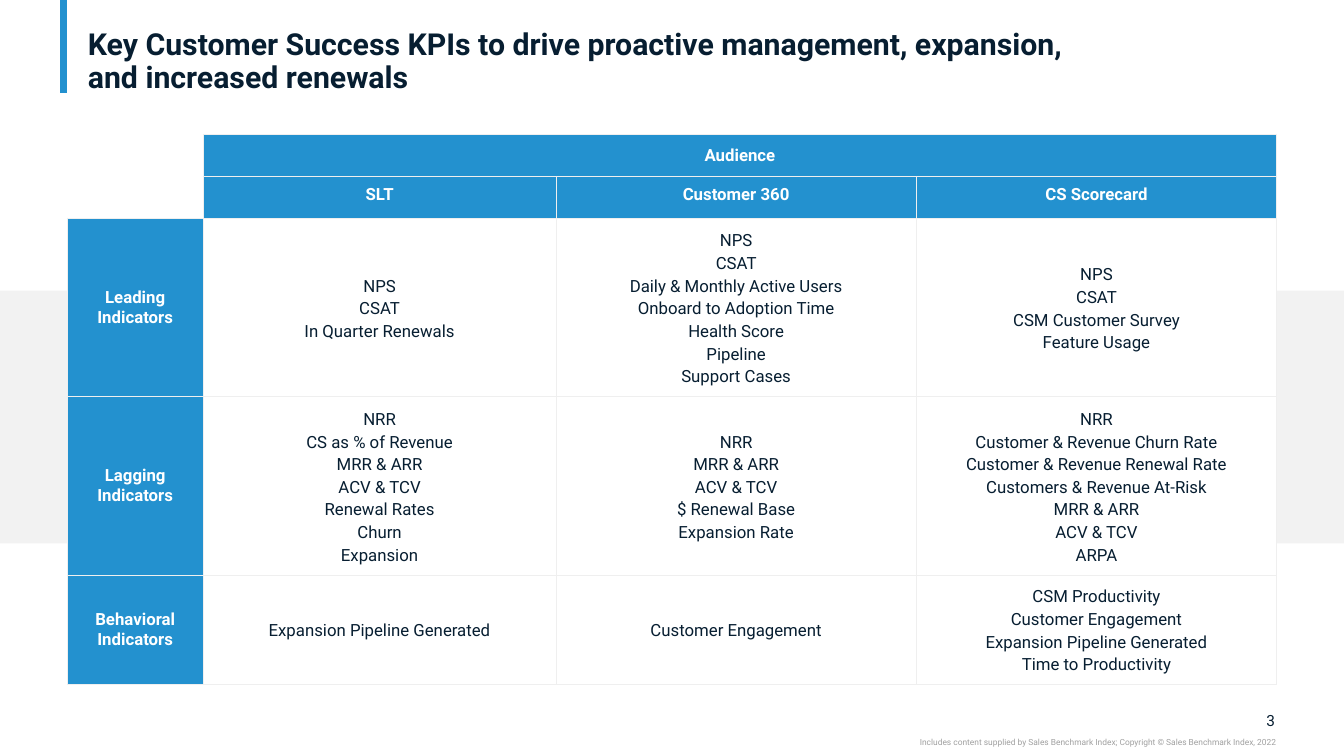
from lxml.etree import SubElement
from pptx import Presentation
from pptx.dml.color import RGBColor as RGB
from pptx.enum.shapes import MSO_CONNECTOR as CONN, MSO_SHAPE as SHAPE
from pptx.enum.text import MSO_ANCHOR as ANCHOR, PP_ALIGN as ALIGN
from pptx.oxml import parse_xml
from pptx.oxml.ns import nsdecls, qn
from pptx.util import Inches, Pt

COLORS = {"blue": "2391CF", "navy": "071E31", "white": "FFFFFF",
          "band": "F2F2F2", "border": "EFEFEF", "note": "A0A0A0"}
COLS, ROWS = 160, 90
COL_WIDTHS = [16.2, 42, 42.9, 42.9]
ROW_HEIGHTS = [5, 5, 20, 20, 12.6]
AUDIENCES = ["SLT", "Customer 360", "CS Scorecard"]
INDICATORS = {
    "Leading Indicators": [
        ["NPS", "CSAT", "In Quarter Renewals"],
        ["NPS", "CSAT", "Daily & Monthly Active Users", "Onboard to Adoption Time",
         "Health Score", "Pipeline", "Support Cases"],
        ["NPS", "CSAT", "CSM Customer Survey", "Feature Usage"],
    ],
    "Lagging Indicators": [
        ["NRR", "CS as % of Revenue", "MRR & ARR", "ACV & TCV", "Renewal Rates",
         "Churn", "Expansion"],
        ["NRR", "MRR & ARR", "ACV & TCV", "$ Renewal Base", "Expansion Rate"],
        ["NRR", "Customer & Revenue Churn Rate", "Customer & Revenue Renewal Rate",
         "Customers & Revenue At-Risk", "MRR & ARR", "ACV & TCV", "ARPA"],
    ],
    "Behavioral Indicators": [
        ["Expansion Pipeline Generated"],
        ["Customer Engagement"],
        ["CSM Productivity", "Customer Engagement", "Expansion Pipeline Generated",
         "Time to Productivity"],
    ],
}


class Deck:
    font = "Roboto"

    def __init__(self):
        self.prs = Presentation()
        self.prs.slide_width, self.prs.slide_height = Inches(13.333), Inches(7.5)
        self.s = self.prs.slides.add_slide(self.prs.slide_layouts[6])

    def x(self, cols):
        return round(self.prs.slide_width * cols / COLS)

    def y(self, rows):
        return round(self.prs.slide_height * rows / ROWS)

    def box(self, left, top, width, height):
        return self.x(left), self.y(top), self.x(width), self.y(height)

    def color(self, name):
        return RGB.from_string(COLORS[name])

    def style(self, p, size, color, bold=False, align=ALIGN.LEFT, spacing=None):
        p.alignment = align
        p.line_spacing = spacing
        p.font.name, p.font.size, p.font.bold = self.font, Pt(size), bold
        p.font.color.rgb = self.color(color)

    def rule(self, x1, y1, x2, y2, color, weight):
        sp = self.s.shapes.add_connector(
            CONN.STRAIGHT, self.x(x1), self.y(y1), self.x(x2), self.y(y2))
        sp.line.color.rgb = self.color(color)
        sp.line.width = Pt(weight)
        SubElement(sp._element.spPr, qn("a:effectLst"))

    def rect(self, area, color):
        sp = self.s.shapes.add_shape(SHAPE.RECTANGLE, *self.box(*area))
        sp.shadow.inherit = False
        sp.fill.solid()
        sp.fill.fore_color.rgb = self.color(color)
        sp.line.fill.background()

    def text(self, area, lines, inset=0, anchor=ANCHOR.TOP, **style):
        tf = self.s.shapes.add_textbox(*self.box(*area)).text_frame
        tf.word_wrap = True
        tf.vertical_anchor = anchor
        tf.margin_left = tf.margin_right = tf.margin_top = tf.margin_bottom = Inches(inset)
        p = tf.paragraphs[0]
        for i, line in enumerate(lines):
            if i:
                p.add_line_break()
            p.add_run().text = line
        self.style(p, **style)

    def table(self, left, top, widths, heights):
        area = self.box(left, top, sum(widths), sum(heights))
        table = self.s.shapes.add_table(len(heights), len(widths), *area).table
        table.first_row = table.horz_banding = False
        for col, width in zip(table.columns, widths):
            col.width = self.x(width)
        for row, height in zip(table.rows, heights):
            row.height = self.y(height)
        return table

    def cell(self, cell, lines=("",), fill=None, sides="LRTB", anchor=ANCHOR.MIDDLE, **style):
        cell.margin_left = cell.margin_right = cell.margin_top = cell.margin_bottom = Inches(0.08)
        cell.vertical_anchor = anchor
        if fill:
            cell.fill.solid()
            cell.fill.fore_color.rgb = self.color(fill)
        else:
            cell.fill.background()
        tf = cell.text_frame
        for i, line in enumerate(lines):
            p = tf.add_paragraph() if i else tf.paragraphs[0]
            p.text = line
            self.style(p, 12, align=ALIGN.CENTER, **style)
        tc_pr = cell._tc.get_or_add_tcPr()
        for i, side in enumerate("LRTB"):
            paint = (f'<a:solidFill><a:srgbClr val="{COLORS["border"]}"/></a:solidFill>'
                     if side in sides else "<a:noFill/>")
            tc_pr.insert(i, parse_xml(
                f'<a:ln{side} {nsdecls("a")} w="{Pt(0.75)}">{paint}</a:ln{side}>'))

    def head(self, cell, label, **options):
        self.cell(cell, [label], "blue", color="white", bold=True, **options)


def main():
    deck = Deck()
    deck.rule(7.56, 0, 7.56, 11.04, "blue", 5)
    deck.text((147.8, 84.6, 4, 2.3), ["3"], anchor=ANCHOR.MIDDLE,
              size=11, color="navy", align=ALIGN.RIGHT)
    deck.text((90, 87.8, 61.9, 1.2),
              ["Includes content supplied by Sales Benchmark Index; "
               "Copyright © Sales Benchmark Index, 2022"],
              size=6, color="note", align=ALIGN.RIGHT)
    deck.rect((0, 34.6, COLS, 30.1), "band")
    deck.text((8.9, 2, 148.1, 10.1),
              ["Key Customer Success KPIs to drive proactive management, expansion,",
               "and increased renewals"],
              inset=0.13, size=21.6, color="navy", bold=True, spacing=0.9)

    table = deck.table(8, 16, COL_WIDTHS, ROW_HEIGHTS)
    deck.cell(table.cell(0, 0), sides="R", color="navy")
    deck.cell(table.cell(1, 0), sides="RB", color="navy")
    table.cell(0, 1).merge(table.cell(0, 3))
    deck.head(table.cell(0, 1), "Audience")
    for c, audience in enumerate(AUDIENCES, 1):
        deck.head(table.cell(1, c), audience, anchor=ANCHOR.TOP)
    for r, (indicator, groups) in enumerate(INDICATORS.items(), 2):
        deck.head(table.cell(r, 0), indicator)
        for c, kpis in enumerate(groups, 1):
            deck.cell(table.cell(r, c), kpis, "white", color="navy", spacing=1.15)
    deck.prs.save("out.pptx")


if __name__ == "__main__":
    main()
